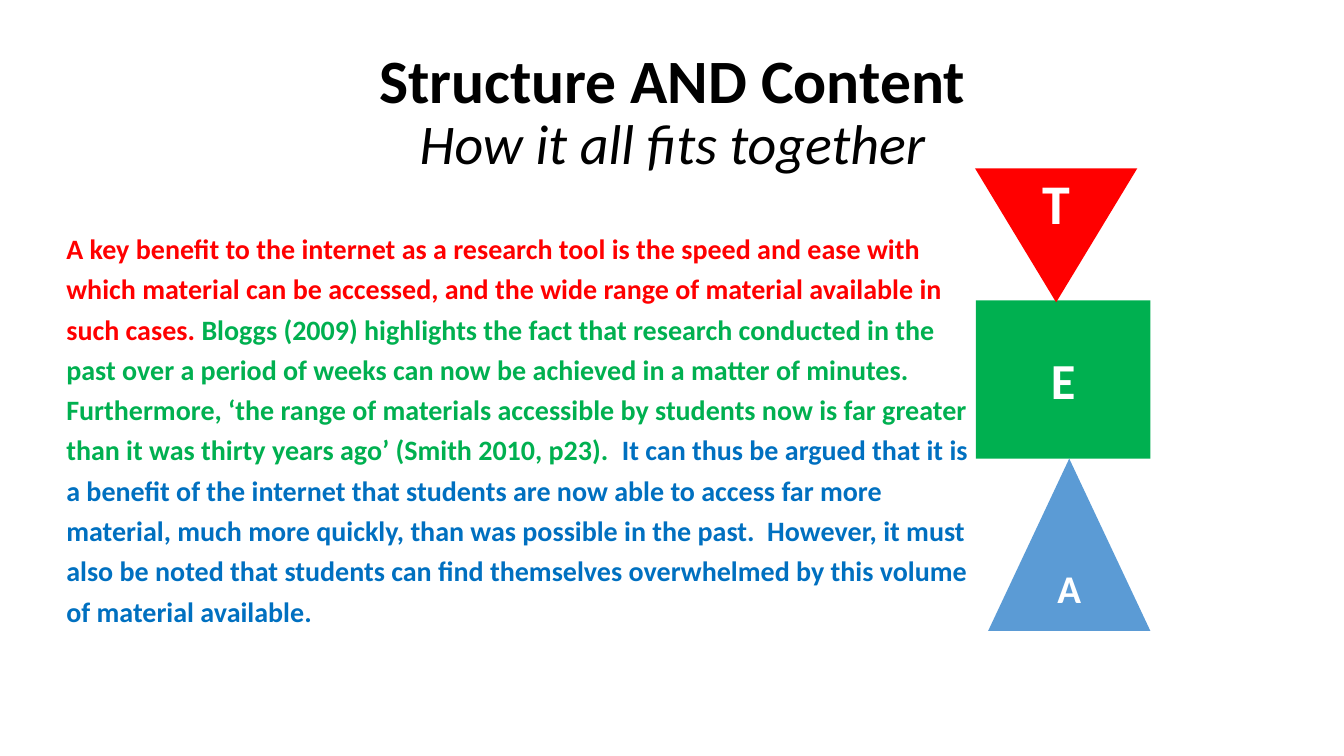
import pptx
import pptx.dml.color
import pptx.enum.shapes
import pptx.enum.text
import pptx.util

PX = 9144  # EMU per px, 100 px to the inch
FONT = "Calibri"
COLOURS = {
    "black": "000000",
    "white": "FFFFFF",
    "topic": "FF0000",
    "evidence": "00B050",
    "analysis": "0070C0",
    "analysis shape": "5B9BD5",
}
Align = pptx.enum.text.PP_ALIGN
Anchor = pptx.enum.text.MSO_ANCHOR
Preset = pptx.enum.shapes.MSO_SHAPE


def rgb(name):
    return pptx.dml.color.RGBColor.from_string(COLOURS[name])


class SlideBuilder:
    def __init__(self, presentation):
        self.slide = presentation.slides.add_slide(presentation.slide_layouts[6])

    def run(self, paragraph, text, size, colour, bold=True, italic=False):
        run = paragraph.add_run()
        run.text = text
        run.font.name = FONT
        run.font.size = pptx.util.Pt(size)
        run.font.bold = bold
        run.font.italic = italic
        run.font.color.rgb = rgb(colour)

    def text_box(self, box, line_spacing, align=Align.LEFT, anchor=Anchor.TOP):
        """Add a wrapping text box and return its empty paragraph."""
        shape = self.slide.shapes.add_textbox(*(v * PX for v in box))
        frame = shape.text_frame
        frame.word_wrap = True
        frame.vertical_anchor = anchor
        paragraph = frame.paragraphs[0]
        paragraph.alignment = align
        paragraph.line_spacing = line_spacing
        return paragraph

    def lettered_shape(self, preset, box, fill, letter, size):
        shape = self.slide.shapes.add_shape(preset, *(v * PX for v in box))
        shape.shadow.inherit = False
        shape.fill.solid()
        shape.fill.fore_color.rgb = rgb(fill)
        shape.line.fill.background()
        shape.text_frame.vertical_anchor = Anchor.MIDDLE
        paragraph = shape.text_frame.paragraphs[0]
        paragraph.alignment = Align.CENTER
        self.run(paragraph, letter, size, "white")


def main():
    presentation = pptx.Presentation()
    presentation.slide_width = 1333 * PX
    presentation.slide_height = 750 * PX
    builder = SlideBuilder(presentation)

    title = builder.text_box((92, 40, 1150, 145), 0.9, Align.CENTER, Anchor.MIDDLE)
    builder.run(title, "Structure AND Content", 44, "black")
    title.add_line_break()
    builder.run(title, "How it all fits together", 40, "black", bold=False, italic=True)

    example = builder.text_box((56, 218, 917, 414), 1.2)
    for colour, text in (
        ("topic",
         "A key benefit to the internet as a research tool is the speed and ease "
         "with which material can be accessed, and the wide range of material "
         "available in such cases. "),
        ("evidence",
         "Bloggs (2009) highlights the fact that research conducted in the past "
         "over a period of weeks can now be achieved in a matter of minutes. "
         "Furthermore, ‘the range of materials accessible by students now is far "
         "greater than it was thirty years ago’ (Smith 2010, p23).  "),
        ("analysis",
         "It can thus be argued that it is a benefit of the internet that students "
         "are now able to access far more material, much more quickly, than was "
         "possible in the past.  However, it must also be noted that students can "
         "find themselves overwhelmed by this volume of material available."),
    ):
        builder.run(example, text, 20, colour)

    for preset, box, fill, letter, size in (
        (Preset.RECTANGLE, (968, 298, 173, 157), "evidence", "E", 36),
        (Preset.ISOSCELES_TRIANGLE, (980, 455, 161, 171), "analysis shape", "A", 28),
        (Preset.FLOWCHART_MERGE, (967, 167, 161, 133), "topic", "T", 40),
    ):
        builder.lettered_shape(preset, box, fill, letter, size)

    presentation.save("out.pptx")


if __name__ == "__main__":
    main()
